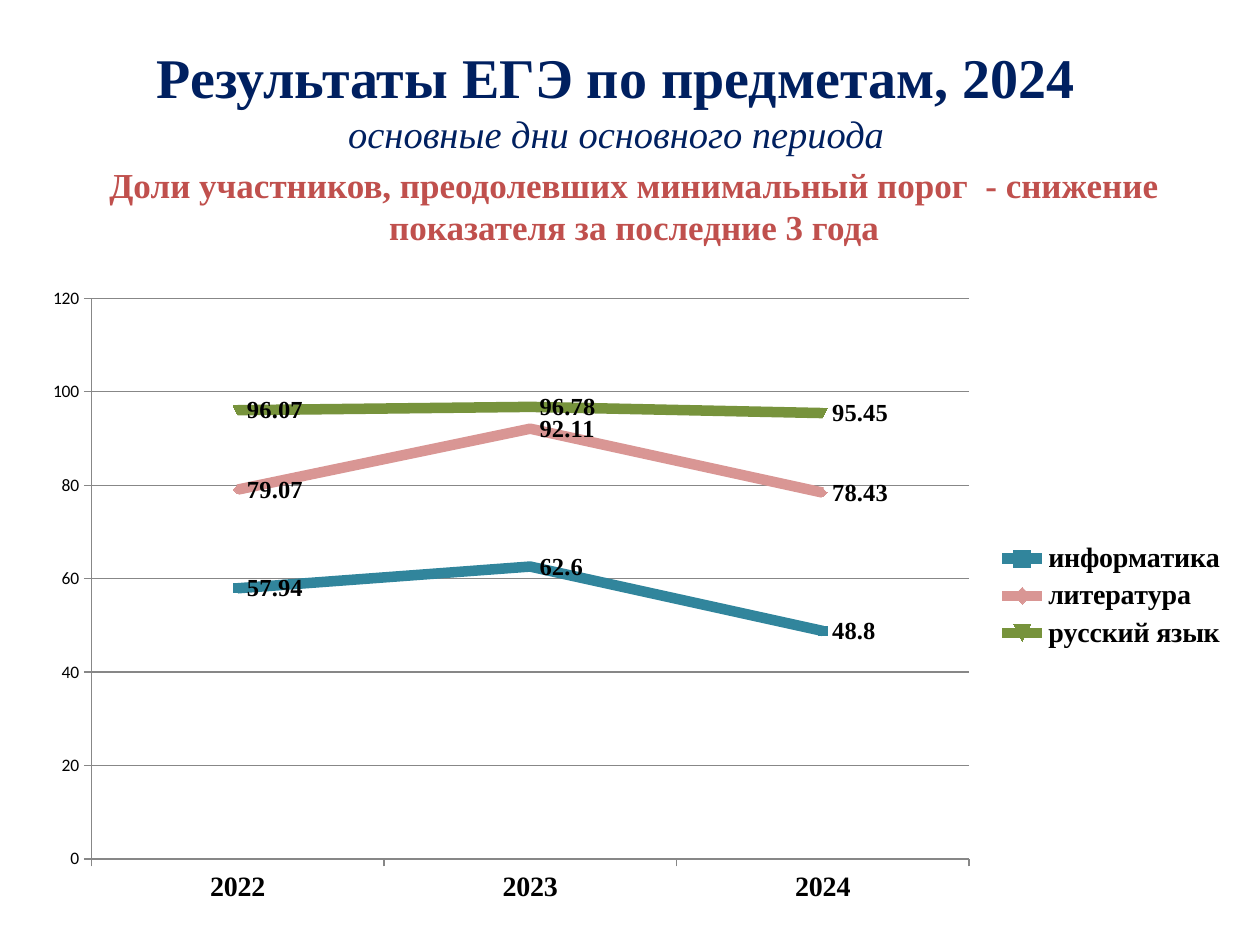
from dataclasses import dataclass

from pptx import Presentation
from pptx.chart.chart import Chart
from pptx.chart.data import CategoryChartData
from pptx.dml.color import RGBColor
from pptx.enum.chart import XL_CHART_TYPE, XL_LEGEND_POSITION, XL_TICK_MARK
from pptx.enum.text import MSO_ANCHOR, PP_ALIGN
from pptx.slide import Slide
from pptx.text.text import Font
from pptx.util import Cm, Pt

COLORS = {
    "navy": "002060",
    "red": "C0504D",
    "black": "000000",
    "axis": "878787",
    "teal": "31859C",
    "pink": "D99694",
    "olive": "77933C",
}
SERIF = "Times New Roman"
YEARS = ["2022", "2023", "2024"]


@dataclass
class Line:
    text: str
    size: int
    color: str
    bold: bool = True
    italic: bool = False


@dataclass
class Heading:
    left: float
    top: float
    width: float
    height: float
    anchor: MSO_ANCHOR
    lines: list[Line]


@dataclass
class Subject:
    name: str
    shares: list[float]
    color: str


HEADINGS = [
    Heading(0.99, 0.41, 22.86, 3.18, MSO_ANCHOR.MIDDLE, [
        Line("Результаты ЕГЭ по предметам, 2024", 32, "navy"),
        Line("основные дни основного периода", 22, "navy", bold=False, italic=True),
    ]),
    Heading(0.58, 3.18, 24.41, 2.74, MSO_ANCHOR.TOP, [
        Line("Доли участников, преодолевших минимальный порог  - "
             "снижение показателя за последние 3 года", 20, "red"),
    ]),
]
SUBJECTS = [
    Subject("информатика", [57.94, 62.6, 48.8], "teal"),
    Subject("литература", [79.07, 92.11, 78.43], "pink"),
    Subject("русский язык", [96.07, 96.78, 95.45], "olive"),
]


def rgb(name: str) -> RGBColor:
    return RGBColor.from_string(COLORS[name])


def style_font(font: Font, size: int, color: str = "black", bold: bool = True,
               italic: bool = False, name: str = SERIF) -> None:
    font.name = name
    font.size = Pt(size)
    font.bold = bold
    font.italic = italic
    font.color.rgb = rgb(color)


def add_heading(slide: Slide, heading: Heading) -> None:
    frame = slide.shapes.add_textbox(
        Cm(heading.left), Cm(heading.top), Cm(heading.width), Cm(heading.height)
    ).text_frame
    frame.word_wrap = True
    frame.vertical_anchor = heading.anchor
    paragraph = frame.paragraphs[0]
    paragraph.text = "\n".join(line.text for line in heading.lines)
    paragraph.alignment = PP_ALIGN.CENTER
    for run, line in zip(paragraph.runs, heading.lines):
        style_font(run.font, line.size, line.color, line.bold, line.italic)


def style_axes(chart: Chart) -> None:
    for axis in (chart.category_axis, chart.value_axis):
        axis.major_tick_mark = XL_TICK_MARK.OUTSIDE
        axis.minor_tick_mark = XL_TICK_MARK.NONE
        axis.format.line.color.rgb = rgb("axis")
    style_font(chart.category_axis.tick_labels.font, 16)
    gridlines = chart.value_axis.major_gridlines
    gridlines.format.line.color.rgb = rgb("axis")


def style_series(chart: Chart) -> None:
    for series, subject in zip(chart.plots[0].series, SUBJECTS):
        color = rgb(subject.color)
        series.smooth = False
        series.format.line.color.rgb = color
        series.format.line.width = Pt(6)
        series.marker.size = 5
        series.marker.format.fill.solid()
        series.marker.format.fill.fore_color.rgb = color
        series.marker.format.line.color.rgb = color
        series.data_labels.show_value = True
        style_font(series.data_labels.font, 14)


def add_share_chart(slide: Slide) -> None:
    shares = CategoryChartData()
    shares.categories = YEARS
    for subject in SUBJECTS:
        shares.add_series(subject.name, subject.shares)
    chart = slide.shapes.add_chart(
        XL_CHART_TYPE.LINE_MARKERS, Cm(0.58), Cm(5.56), Cm(24.41), Cm(12.9), shares
    ).chart
    style_font(chart.font, 10, bold=False, name="Calibri")
    chart.has_title = False
    chart.plots[0].vary_by_categories = False
    chart.has_legend = True
    chart.legend.position = XL_LEGEND_POSITION.RIGHT
    chart.legend.include_in_layout = False
    style_font(chart.legend.font, 16)
    style_axes(chart)
    style_series(chart)


def main() -> None:
    presentation = Presentation()
    presentation.slide_width = Cm(25.4)
    presentation.slide_height = Cm(19.05)
    slide = presentation.slides.add_slide(presentation.slide_layouts[6])
    for heading in HEADINGS:
        add_heading(slide, heading)
    add_share_chart(slide)
    presentation.save("out.pptx")


if __name__ == "__main__":
    main()
